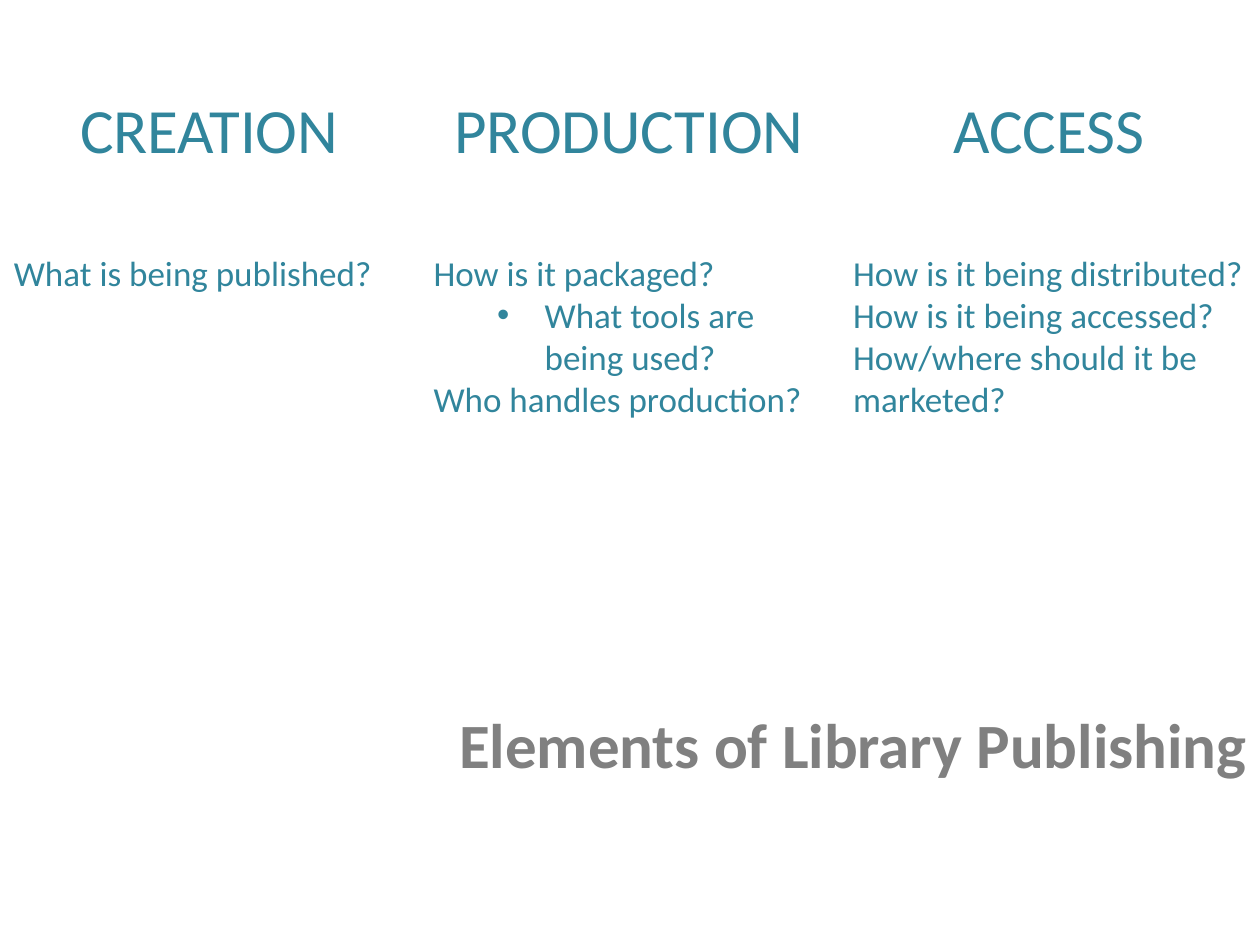
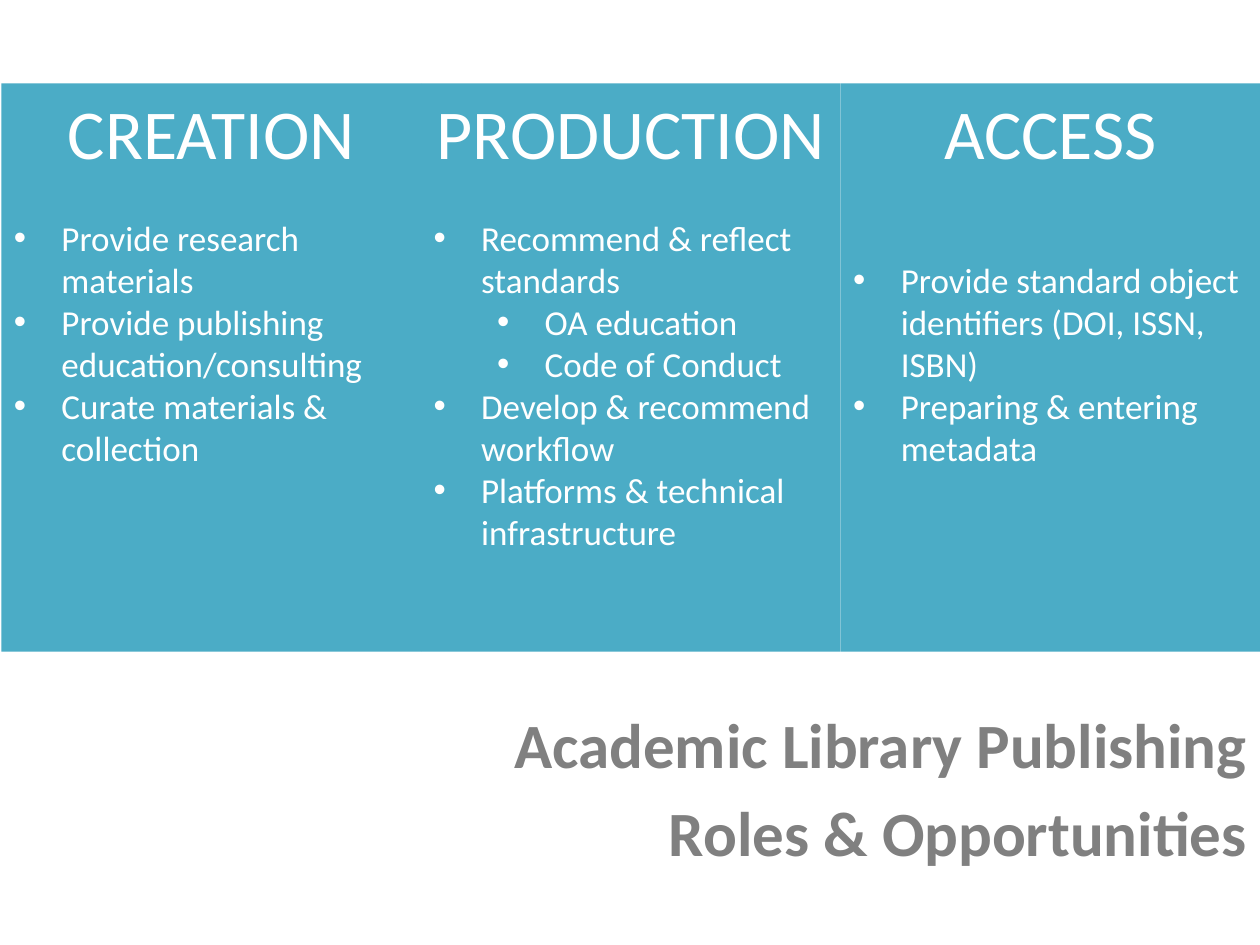
from dataclasses import dataclass

from lxml import etree
from pptx import Presentation
from pptx import util as u
from pptx.dml.color import RGBColor
from pptx.enum import shapes, text
from pptx.oxml.ns import qn

TEAL, AQUA, GREY, WHITE = "31859C", "4BACC6", "808080", "FFFFFF"
FONT = "Calibri"
BODY_SIZE = 20
BLANK_LINE = 24.4
HANG = 0.96
BULLET_INDENTS = [0.96, 2.24]
COLUMN_LEFT, COLUMN_PITCH = 0.03, 8.46
CAPTION_BOX = (3.81, 14.1, 21.59, 3.45)


@dataclass
class ColumnStyle:
    top: float
    width: float
    height: float
    fill: str
    ink: str
    heading_size: int
    border: float = 0


QUESTIONS = ColumnStyle(1.7, 8.38, 11.38, WHITE, TEAL, 36, border=3)
ROLES = ColumnStyle(1.68, 8.46, 11.46, AQUA, WHITE, 40)


def color(hex_code):
    return RGBColor.from_string(hex_code)


def set_font(paragraph, size, ink, bold=False):
    font = paragraph.font
    font.name, font.size, font.bold = FONT, u.Pt(size), bold
    font.color.rgb = color(ink)


def set_bullet(paragraph, level):
    paragraph.level = level
    properties = paragraph._p.get_or_add_pPr()
    properties.set("marL", str(u.Cm(BULLET_INDENTS[level])))
    properties.set("indent", str(-u.Cm(HANG)))
    etree.SubElement(properties, qn("a:buFont")).set("typeface", "Arial")
    etree.SubElement(properties, qn("a:buChar")).set("char", "•")


def add_column(slide, left, style, heading, gap_lines, points):
    column = slide.shapes.add_shape(
        shapes.MSO_SHAPE.RECTANGLE,
        *map(u.Cm, (left, style.top, style.width, style.height)))
    column.shadow.inherit = False
    column.fill.solid()
    column.fill.fore_color.rgb = color(style.fill)
    if style.border:
        column.line.color.rgb = color(WHITE)
        column.line.width = u.Pt(style.border)
    else:
        column.line.fill.background()

    frame = column.text_frame
    frame.word_wrap = True
    frame.vertical_anchor = text.MSO_ANCHOR.TOP
    title = frame.paragraphs[0]
    title.text = heading
    title.alignment = text.PP_ALIGN.CENTER
    set_font(title, style.heading_size, style.ink)

    for index, (level, wording) in enumerate(points):
        point = frame.add_paragraph()
        point.text = wording
        point.alignment = text.PP_ALIGN.LEFT
        if index == 0:
            point.space_before = u.Pt(gap_lines * BLANK_LINE)
        if level is not None:
            set_bullet(point, level)
        set_font(point, BODY_SIZE, style.ink)


def add_caption(slide, lines):
    caption = slide.shapes.title
    caption.left, caption.top, caption.width, caption.height = map(u.Cm, CAPTION_BOX)
    frame = caption.text_frame
    frame.auto_size = text.MSO_AUTO_SIZE.NONE
    frame.vertical_anchor = text.MSO_ANCHOR.TOP
    frame.text = "\n".join(lines)
    for line in frame.paragraphs:
        line.alignment = text.PP_ALIGN.RIGHT
        line.space_before = u.Pt(0)
        line.space_after = u.Pt(7)
        set_font(line, 36, GREY, bold=True)


def add_columns_slide(deck, caption, style, columns):
    slide = deck.slides.add_slide(deck.slide_layouts.get_by_name("Title Only"))
    for index, column in enumerate(columns):
        add_column(slide, COLUMN_LEFT + index * COLUMN_PITCH, style, *column)
    add_caption(slide, caption)


def main():
    deck = Presentation()
    deck.slide_width, deck.slide_height = u.Cm(25.4), u.Cm(19.05)

    add_columns_slide(deck, ["Elements of Library Publishing"], QUESTIONS, [
        ("CREATION", 2, [(None, "What is being published?")]),
        ("PRODUCTION", 2, [
            (None, "How is it packaged?"),
            (1, "What tools are being used?"),
            (None, "Who handles production?")]),
        ("ACCESS", 2, [
            (None, "How is it being distributed?"),
            (None, "How is it being accessed?"),
            (None, "How/where should it be marketed?")]),
    ])

    add_columns_slide(deck, ["Academic Library Publishing", "Roles & Opportunities"], ROLES, [
        ("CREATION", 1, [
            (0, "Provide research materials"),
            (0, "Provide publishing education/consulting"),
            (0, "Curate materials & collection")]),
        ("PRODUCTION", 1, [
            (0, "Recommend & reflect standards"),
            (1, "OA education"),
            (1, "Code of Conduct"),
            (0, "Develop & recommend workflow"),
            (0, "Platforms & technical infrastructure")]),
        ("ACCESS", 2, [
            (0, "Provide standard object identifiers (DOI, ISSN, ISBN)"),
            (0, "Preparing & entering metadata")]),
    ])

    deck.save("out.pptx")


if __name__ == "__main__":
    main()
